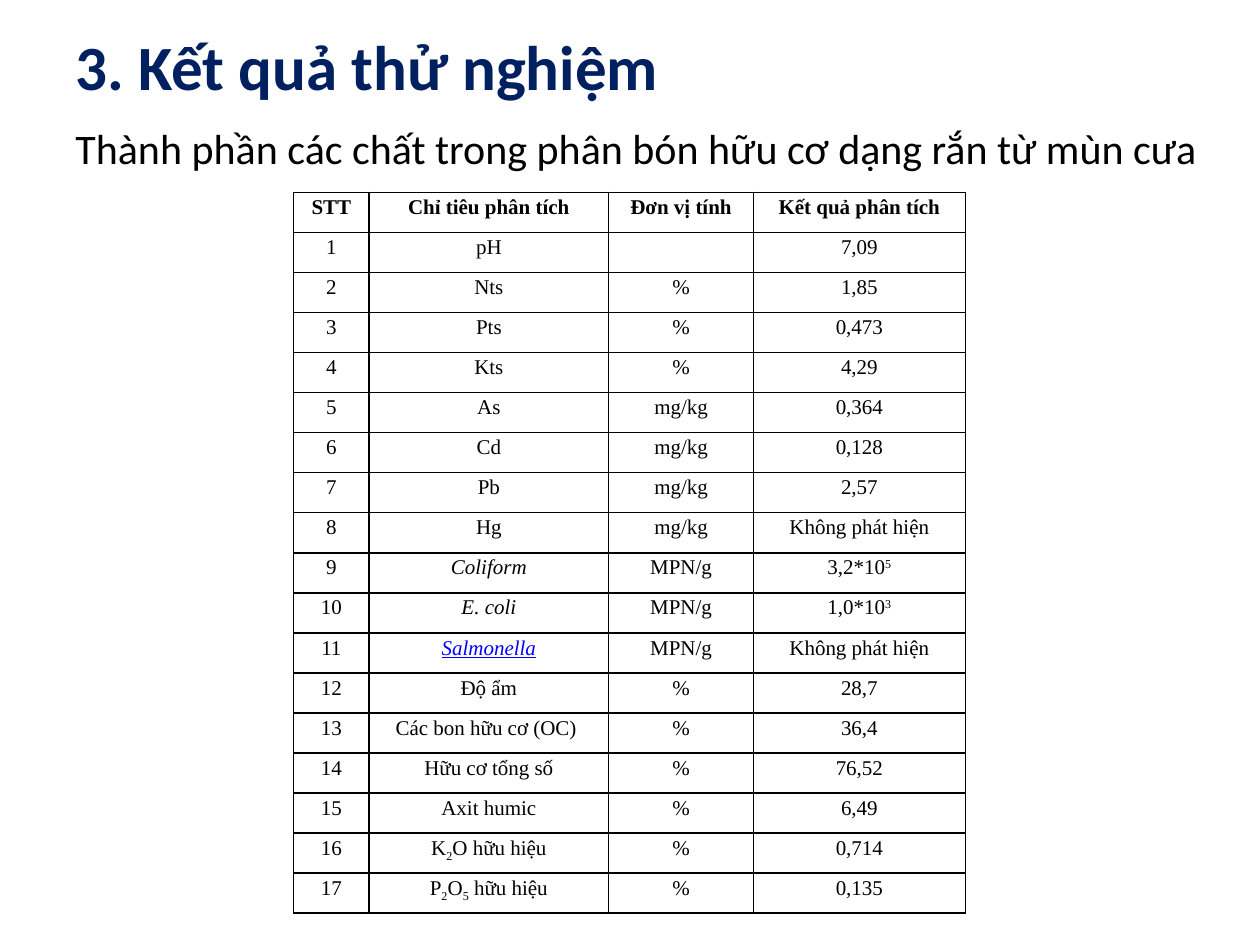
from dataclasses import dataclass

from lxml import etree
from pptx import Presentation, util as u
from pptx.dml.color import RGBColor
from pptx.enum import text
from pptx.oxml import ns

NAVY, BLACK, LINK_BLUE = "002060", "000000", "0000FF"


@dataclass(frozen=True)
class Run:
    words: str
    font: str = "Times New Roman"
    size: float = 12
    color: str = BLACK
    bold: bool = False
    italic: bool = False
    underline: bool = False
    baseline: int = 0


@dataclass(frozen=True)
class Box:
    left: float
    top: float
    width: float
    height: float


@dataclass(frozen=True)
class Result:
    name: str | list[Run]
    unit: str
    value: str | list[Run]


def rgb(color: str) -> RGBColor:
    return RGBColor.from_string(color)


def sub(words: str) -> Run:
    return Run(words, baseline=-25000)


def power(base: str, exponent: str) -> list[Run]:
    return [Run(base), Run(exponent, baseline=30000)]


def add_runs(p, runs: list[Run]) -> None:
    for run in runs:
        r = p.add_run()
        r.text = run.words
        r.font.name = run.font
        r.font.size = u.Pt(run.size)
        r.font.color.rgb = rgb(run.color)
        r.font.bold = run.bold
        r.font.italic = run.italic
        r.font.underline = run.underline
        if run.baseline:
            r.font._element.set("baseline", str(run.baseline))


def add_text(s, box: Box, run: Run, anchor):
    sp = s.shapes.add_textbox(u.Cm(box.left), u.Cm(box.top), u.Cm(box.width), u.Cm(box.height))
    tf = sp.text_frame
    tf.word_wrap = True
    tf.vertical_anchor = anchor
    p = tf.paragraphs[0]
    add_runs(p, [run])
    return p


def set_borders(cell, color: str, width: float) -> None:
    tc_pr = cell._tc.get_or_add_tcPr()
    for i, side in enumerate(("lnL", "lnR", "lnT", "lnB")):
        ln = etree.Element(ns.qn(f"a:{side}"), w=str(u.Pt(width)))
        fill = etree.SubElement(ln, ns.qn("a:solidFill"))
        etree.SubElement(fill, ns.qn("a:srgbClr"), val=color)
        tc_pr.insert(i, ln)


def fill_cell(cell, content: str | list[Run], bold: bool) -> None:
    cell.margin_left = cell.margin_right = u.Cm(0.18)
    cell.margin_top = cell.margin_bottom = 0
    cell.fill.background()
    set_borders(cell, BLACK, 1)
    p = cell.text_frame.paragraphs[0]
    p.alignment = text.PP_ALIGN.CENTER
    p.line_spacing = 1.15
    p.space_before = p.space_after = u.Pt(6)
    if content:
        add_runs(p, [Run(content, bold=bold)] if isinstance(content, str) else content)
    else:
        p._p.get_or_add_endParaRPr().set("sz", "1200")


def add_results(s, box: Box, widths: list[float], header: list[str], results: list[Result]) -> None:
    rows = [header] + [[str(n), x.name, x.unit, x.value] for n, x in enumerate(results, 1)]
    table = s.shapes.add_table(len(rows), len(widths), u.Cm(box.left), u.Cm(box.top),
                               u.Cm(box.width), u.Cm(box.height)).table
    table.first_row = table.horz_banding = False
    for column, width in zip(table.columns, widths):
        column.width = u.Cm(width)
    for i, row in enumerate(rows):
        table.rows[i].height = u.Cm(box.height / len(rows))
        for j, content in enumerate(row):
            fill_cell(table.cell(i, j), content, bold=i == 0)


HEADER = ["STT", "Chỉ tiêu phân tích", "Đơn vị tính", "Kết quả phân tích"]
NOT_FOUND = "Không phát hiện"
RESULTS = [
    Result("pH", "", "7,09"),
    Result("Nts", "%", "1,85"),
    Result("Pts", "%", "0,473"),
    Result("Kts", "%", "4,29"),
    Result("As", "mg/kg", "0,364"),
    Result("Cd", "mg/kg", "0,128"),
    Result("Pb", "mg/kg", "2,57"),
    Result("Hg", "mg/kg", NOT_FOUND),
    Result([Run("Coliform", italic=True)], "MPN/g", power("3,2*10", "5")),
    Result([Run("E. coli", italic=True)], "MPN/g", power("1,0*10", "3")),
    Result([Run("Salmonella", color=LINK_BLUE, italic=True, underline=True)], "MPN/g", NOT_FOUND),
    Result("Độ ẩm", "%", "28,7"),
    Result("Các bon hữu cơ (OC) ", "%", "36,4"),
    Result("Hữu cơ tổng số", "%", "76,52"),
    Result("Axit humic", "%", "6,49"),
    Result([Run("K"), sub("2"), Run("O hữu hiệu")], "%", "0,714"),
    Result([Run("P"), sub("2"), Run("O"), sub("5"), Run(" hữu hiệu")], "%", "0,135"),
]


def main() -> None:
    prs = Presentation()
    prs.slide_width, prs.slide_height = u.Cm(25.4), u.Cm(19.05)
    s = prs.slides.add_slide(prs.slide_layouts[6])
    add_text(s, Box(1.27, 0.43, 22.86, 1.78),
             Run("3. Kết quả thử nghiệm", "Calibri", 36, NAVY, bold=True), text.MSO_ANCHOR.MIDDLE)
    p = add_text(s, Box(1.27, 2.34, 23.29, 14.68),
                 Run("Thành phần các chất trong phân bón hữu cơ dạng rắn từ mùn cưa", "Calibri", 24),
                 text.MSO_ANCHOR.TOP)
    p.space_before = u.Pt(4.8)
    p_pr = p._p.get_or_add_pPr()
    p_pr.set("marL", str(u.Cm(0.95)))
    p_pr.set("indent", str(u.Cm(-0.95)))
    add_results(s, Box(5.92, 3.88, 13.54, 14.53), [1.52, 4.83, 2.92, 4.27], HEADER, RESULTS)
    prs.save("out.pptx")


if __name__ == "__main__":
    main()
